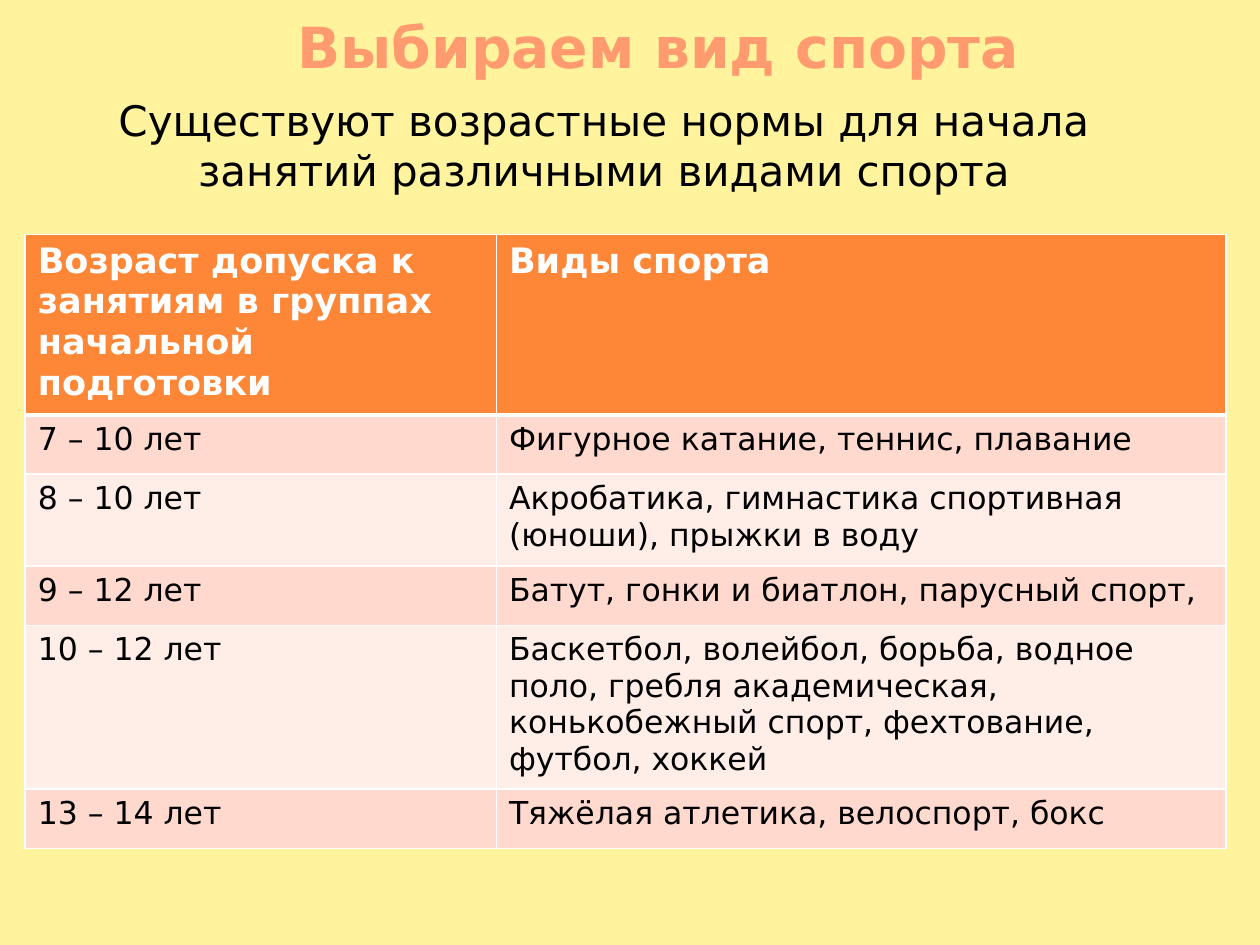
from typing import NamedTuple

from lxml.etree import SubElement
from pptx import Presentation
from pptx.dml.color import RGBColor as RGB
from pptx.enum.text import MSO_ANCHOR as ANCHOR, PP_ALIGN as ALIGN
from pptx.oxml.ns import qn
from pptx.util import Inches, Pt

FONT = "DejaVu Sans"
COLORS = {
    "background": "FFF39D",
    "title": "FF9B6E",
    "text": "000000",
    "header": "FE8637",
    "odd": "FFD9CE",
    "even": "FFEDE8",
    "white": "FFFFFF",
}
COLUMN_WIDTHS = (3.74, 5.79)


class Style(NamedTuple):
    size: float
    color: str
    bold: bool = False


class Heading(NamedTuple):
    text: str
    box: tuple[float, float, float, float]
    style: Style
    anchor: ANCHOR


class Row(NamedTuple):
    age: str
    sports: str
    height: float


HEADINGS = [
    Heading("Выбираем вид спорта", (0.75, 0.13, 8.95, 0.55),
            Style(32.4, "title", True), ANCHOR.BOTTOM),
    Heading("Существуют возрастные нормы для начала занятий различными видами спорта",
            (0.18, 0.7, 9.23, 0.91), Style(24, "text"), ANCHOR.TOP),
]
ROWS = [
    Row("Возраст допуска к занятиям в группах начальной подготовки", "Виды спорта", 1.11),
    Row("7 – 10 лет", "Фигурное катание, теннис, плавание", 0.47),
    Row("8 – 10 лет", "Акробатика, гимнастика спортивная (юноши), прыжки в воду", 0.73),
    Row("9 – 12 лет", "Батут, гонки и биатлон, парусный спорт,", 0.47),
    Row("10 – 12 лет", "Баскетбол, волейбол, борьба, водное поло, гребля академическая, "
        "конькобежный спорт, фехтование, футбол, хоккей", 1.26),
    Row("13 – 14 лет", "Тяжёлая атлетика, велоспорт, бокс", 0.47),
]


def rgb(name: str) -> RGB:
    return RGB.from_string(COLORS[name])


def write(tf, text: str, style: Style) -> None:
    tf.text = text
    font = tf.paragraphs[0].runs[0].font
    font.name, font.size, font.bold = FONT, Pt(style.size), style.bold
    font.color.rgb = rgb(style.color)


def add_heading(slide, heading: Heading) -> None:
    tf = slide.shapes.add_textbox(*map(Inches, heading.box)).text_frame
    tf.word_wrap = True
    tf.vertical_anchor = heading.anchor
    write(tf, heading.text, heading.style)
    tf.paragraphs[0].alignment = ALIGN.CENTER


def set_borders(cell, bottom: float) -> None:
    """Draw white borders, 1 pt wide except for the bottom; call before filling."""
    tc_pr = cell._tc.get_or_add_tcPr()
    for side, width in (("L", 1), ("R", 1), ("T", 1), ("B", bottom)):
        line = SubElement(tc_pr, qn(f"a:ln{side}"), w=str(Pt(width)))
        fill = SubElement(line, qn("a:solidFill"))
        SubElement(fill, qn("a:srgbClr"), val=COLORS["white"])


def add_age_table(slide, rows: list[Row]) -> None:
    table = slide.shapes.add_table(
        len(rows), len(COLUMN_WIDTHS), Inches(0.2), Inches(1.86),
        Inches(sum(COLUMN_WIDTHS)), Inches(sum(row.height for row in rows)),
    ).table
    for column, width in zip(table.columns, COLUMN_WIDTHS):
        column.width = Inches(width)
    for i, row in enumerate(rows):
        table.rows[i].height = Inches(row.height)
        if i == 0:
            style, fill, bottom = Style(20, "white", True), "header", 3
        else:
            style, fill, bottom = Style(18, "text"), "odd" if i % 2 else "even", 1
        for cell, text in zip(table.rows[i].cells, (row.age, row.sports)):
            set_borders(cell, bottom)
            cell.fill.solid()
            cell.fill.fore_color.rgb = rgb(fill)
            write(cell.text_frame, text, style)


def main() -> None:
    prs = Presentation()
    prs.slide_width, prs.slide_height = Inches(10), Inches(7.5)
    slide = prs.slides.add_slide(prs.slide_layouts[6])
    slide.background.fill.solid()
    slide.background.fill.fore_color.rgb = rgb("background")
    for heading in HEADINGS:
        add_heading(slide, heading)
    add_age_table(slide, ROWS)
    prs.save("out.pptx")


if __name__ == "__main__":
    main()
